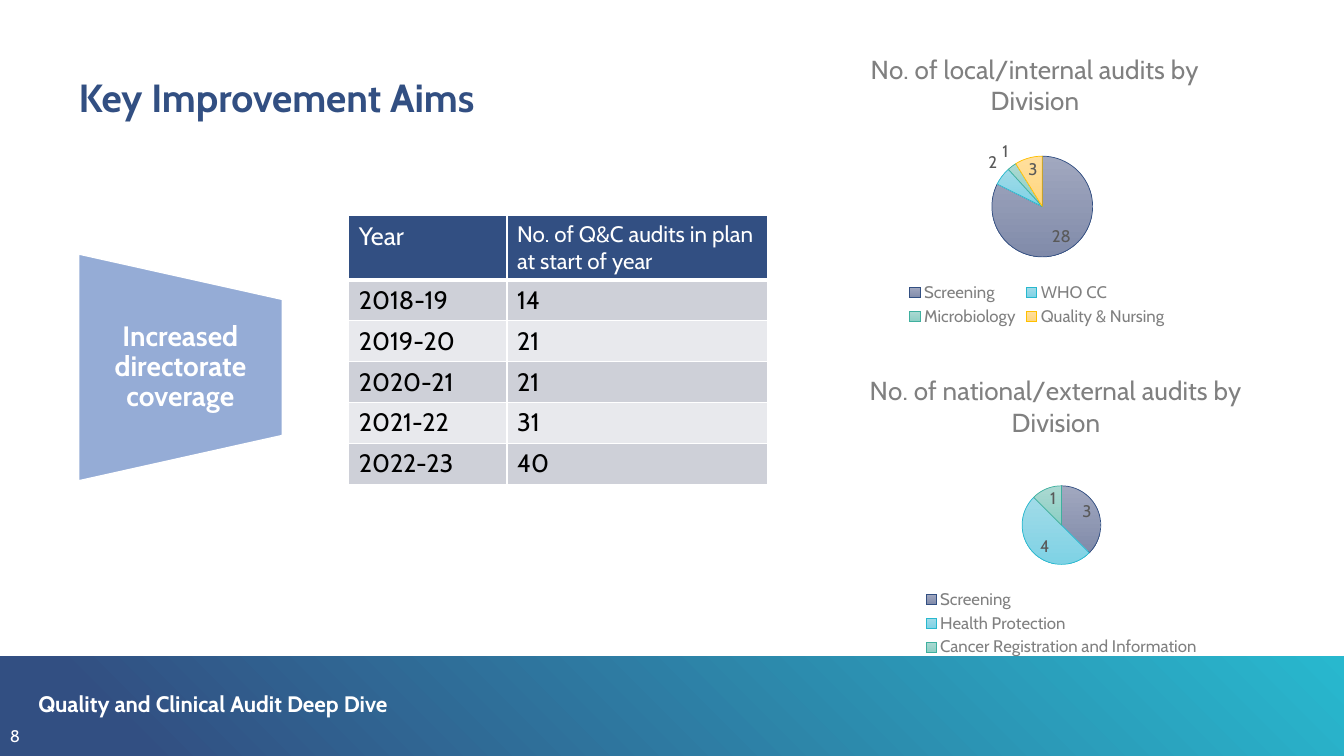
"""Build the slide on key improvement aims for clinical audit."""
from dataclasses import dataclass

from lxml import etree
from pptx import Presentation
from pptx import util as u
from pptx.chart import data
from pptx.dml.color import RGBColor
from pptx.enum import chart as charts, shapes, text
from pptx.oxml import ns

FONT = "Cabin"
SLIDE_WIDTH, SLIDE_HEIGHT = u.Inches(13.33), u.Inches(7.5)
COLUMN, ROW = SLIDE_WIDTH / 100, SLIDE_HEIGHT / 100

WHITE = RGBColor(0xFF, 0xFF, 0xFF)
BLACK = RGBColor(0x00, 0x00, 0x00)
NAVY = RGBColor(0x32, 0x4F, 0x82)
CYAN = RGBColor(0x28, 0xB8, 0xCE)
TEAL = RGBColor(0x3F, 0xB0, 0x9F)
AMBER = RGBColor(0xFF, 0xC0, 0x00)
PERIWINKLE = RGBColor(0x8A, 0xA4, 0xD2)
DARK_BAND = RGBColor(0xCE, 0xD0, 0xD8)
LIGHT_BAND = RGBColor(0xE8, 0xE9, 0xED)
GREY = RGBColor(0x80, 0x80, 0x80)
LABEL_GREY = RGBColor(0x59, 0x59, 0x59)

SLICES = (
    (RGBColor(0xA1, 0xA8, 0xBF), RGBColor(0x81, 0x8B, 0xAA), NAVY),
    (RGBColor(0xA1, 0xDB, 0xE8), RGBColor(0x7E, 0xD2, 0xE5), CYAN),
    (RGBColor(0xAB, 0xD9, 0xD2), RGBColor(0x8C, 0xCF, 0xC4), TEAL),
    (RGBColor(0xFF, 0xDF, 0x9E), RGBColor(0xFF, 0xD6, 0x7C), AMBER),
)


@dataclass(frozen=True)
class Area:
    """A region in grid columns and rows."""
    left: float
    top: float
    width: float
    height: float

    def emu(self) -> tuple[int, int, int, int]:
        """Return left, top, width and height in EMU."""
        return (round(self.left * COLUMN), round(self.top * ROW),
                round(self.width * COLUMN), round(self.height * ROW))


@dataclass(frozen=True)
class AuditPie:
    """A pie of audits by division, with layouts as shares of the chart."""
    area: Area
    heading: str
    audits: dict[str, int]
    heading_at: dict[str, float]
    pie_at: dict[str, float]


AUDIT_PIES = (
    AuditPie(Area(58.43, 3.73, 37.5, 40), "No. of local/internal audits by Division",
             {"Screening": 28, "WHO CC": 2, "Microbiology": 1, "Quality & Nursing": 3},
             {"x": 0.16, "y": 0.06}, {"x": 0.41, "y": 0.42, "w": 0.2, "h": 0.34}),
    AuditPie(Area(60.23, 47.47, 37.5, 40), "No. of national/external audits by Division",
             {"Screening": 3, "Health Protection": 4,
              "Cancer Registration and Information": 1},
             {"x": 0.11, "y": 0.03}, {"x": 0.42, "y": 0.42, "w": 0.16, "h": 0.26}),
)
PLAN = (("Year", "No. of Q&C audits in plan at start of year"),
        ("2018-19", "14"), ("2019-20", "21"), ("2020-21", "21"),
        ("2021-22", "31"), ("2022-23", "40"))


def style(font, size: float, color: RGBColor, bold: bool = False) -> None:
    """Set the typeface, size, colour and weight of a font."""
    font.name, font.size, font.bold = FONT, u.Pt(size), bold
    font.color.rgb = color


def write(frame, words: str, *, size: float, color: RGBColor = WHITE, bold: bool = False,
          align=text.PP_ALIGN.LEFT, anchor=text.MSO_ANCHOR.TOP, spacing: float = 0.9,
          inset: tuple[float, float] = (0, 0)) -> None:
    """Fill a text frame with one formatted paragraph."""
    frame.word_wrap, frame.vertical_anchor = True, anchor
    frame.auto_size = text.MSO_AUTO_SIZE.NONE
    frame.margin_left = frame.margin_right = u.Inches(inset[0])
    frame.margin_top = frame.margin_bottom = u.Inches(inset[1])
    frame.text = words
    line = frame.paragraphs[0]
    line.alignment, line.line_spacing, line.space_before = align, spacing, u.Pt(0)
    properties = line._p.get_or_add_pPr()
    properties.set("marL", "0")
    properties.set("indent", "0")
    etree.SubElement(properties, ns.qn("a:buNone"))
    style(line.runs[0].font, size, color, bold)


def blend(fill, stops: tuple[tuple[float, RGBColor], ...], angle: float) -> None:
    """Apply a two-stop linear gradient."""
    fill.gradient()
    fill.gradient_angle = angle
    for stop, (position, color) in zip(fill.gradient_stops, stops):
        stop.position, stop.color.rgb = position, color


def place(element, index: int, shares: dict[str, float]) -> None:
    """Give a chart part a manual layout."""
    for former in element.findall(ns.qn("c:layout")):
        element.remove(former)
    layout = etree.Element(ns.qn("c:layout"))
    manual = etree.SubElement(layout, ns.qn("c:manualLayout"))
    if "w" in shares:
        etree.SubElement(manual, ns.qn("c:layoutTarget"), val="inner")
    for side in "xy":
        etree.SubElement(manual, ns.qn(f"c:{side}Mode"), val="edge")
    for side, share in shares.items():
        etree.SubElement(manual, ns.qn(f"c:{side}"), val=str(share))
    element.insert(index, layout)


def add_band(slide) -> None:
    """Draw the gradient band behind the footer."""
    band = slide.shapes.add_shape(shapes.MSO_SHAPE.RECTANGLE,
                                  *Area(0, 86.8, 100, 13.2).emu())
    band.shadow.inherit = False
    band.line.fill.background()
    blend(band.fill, ((0.1, NAVY), (1, CYAN)), 45)
    slide.shapes._spTree.insert(2, band._element)


def add_funnel(slide) -> None:
    """Draw the tapering panel that names the aim."""
    left, top, width, height = Area(5.85, 33.6, 15.15, 30).emu()
    builder = slide.shapes.build_freeform(left, top + height)
    builder.add_line_segments(((left, top), (left + width, top + height // 5),
                               (left + width, top + height * 4 // 5)), close=True)
    funnel = builder.convert_to_shape()
    funnel.shadow.inherit = False
    funnel.fill.solid()
    funnel.fill.fore_color.rgb = PERIWINKLE
    tint = funnel._element.spPr.find(f".//{ns.qn('a:srgbClr')}")
    etree.SubElement(tint, ns.qn("a:alpha"), val="90000")
    funnel.line.color.rgb, funnel.line.width = WHITE, u.Pt(1)
    write(funnel.text_frame, "Increased directorate coverage", size=20, bold=True,
          align=text.PP_ALIGN.CENTER, anchor=text.MSO_ANCHOR.MIDDLE, inset=(0.12, 0.45))


def add_border(cell, side: str, points: float) -> None:
    """Draw one white cell border."""
    border = etree.SubElement(cell._tc.get_or_add_tcPr(), ns.qn(f"a:ln{side}"),
                              w=str(u.Pt(points)))
    fill = etree.SubElement(border, ns.qn("a:solidFill"))
    etree.SubElement(fill, ns.qn("a:srgbClr"), val=str(WHITE))


def add_plan(slide) -> None:
    """Draw the table of planned audits by year."""
    plan = slide.shapes.add_table(len(PLAN), 2, *Area(25.95, 28.53, 31.2, 34.67).emu()).table
    for column, width in zip(plan.columns, (11.78, 19.42)):
        column.width = round(width * COLUMN)
    for index, entries in enumerate(PLAN):
        header = index == 0
        plan.rows[index].height = round((8 if header else 5.33) * ROW)
        shade = NAVY if header else DARK_BAND if index % 2 else LIGHT_BAND
        for position, entry in enumerate(entries):
            cell = plan.cell(index, position)
            write(cell.text_frame, entry, size=16 if header and position else 18,
                  color=WHITE if header else BLACK, spacing=1)
            cell.margin_left = cell.margin_right = u.Inches(0.1)
            cell.margin_top = cell.margin_bottom = u.Inches(0.05)
            for side, points in (("L", 1), ("R", 1), ("T", 3 if index == 1 else 1),
                                 ("B", 3 if header else 1)):
                add_border(cell, side, points)
            cell.fill.solid()
            cell.fill.fore_color.rgb = shade


def add_audit_pie(slide, audit_pie: AuditPie) -> None:
    """Draw one pie chart with its heading, labels and legend."""
    numbers = data.CategoryChartData()
    numbers.categories = list(audit_pie.audits)
    numbers.add_series("Series 1", list(audit_pie.audits.values()))
    pie = slide.shapes.add_chart(charts.XL_CHART_TYPE.PIE, *audit_pie.area.emu(),
                                 numbers).chart
    style(pie.font, 10, BLACK)
    heading = pie.chart_title
    heading.text_frame.text = audit_pie.heading
    style(heading.text_frame.paragraphs[0].runs[0].font, 18.6, GREY)
    heading.include_in_layout = False
    place(heading._element, 1, audit_pie.heading_at)
    place(pie._chartSpace.chart.plotArea, 0, audit_pie.pie_at)
    pie.has_legend = True
    pie.legend.position = charts.XL_LEGEND_POSITION.BOTTOM
    pie.legend.include_in_layout = False
    style(pie.legend.font, 12, GREY)
    plot = pie.plots[0]
    plot.has_data_labels = True
    plot.data_labels.show_value, plot.data_labels.show_percentage = True, False
    plot.data_labels.position = charts.XL_LABEL_POSITION.BEST_FIT
    style(plot.data_labels.font, 12, LABEL_GREY)
    for index, (light, deep, edge) in enumerate(SLICES[:len(audit_pie.audits)]):
        division = plot.series[0].points[index].format
        blend(division.fill, ((0, light), (1, deep)), 270)
        division.line.color.rgb, division.line.width = edge, u.Pt(0.5)


def main() -> None:
    """Assemble and save the slide."""
    deck = Presentation()
    deck.slide_width, deck.slide_height = SLIDE_WIDTH, SLIDE_HEIGHT
    slide = deck.slides.add_slide(deck.slide_layouts[1])
    aims, footer = slide.placeholders
    aims.left, aims.top, aims.width, aims.height = Area(5.85, 10.4, 88.3, 5.73).emu()
    write(aims.text_frame, "Key Improvement Aims", size=28, color=NAVY, bold=True)
    footer.left, footer.top, footer.width, footer.height = Area(2.85, 91.73, 29.5, 3.2).emu()
    write(footer.text_frame, "Quality and Clinical Audit Deep Dive", size=16, bold=True)
    add_band(slide)
    add_funnel(slide)
    page = slide.shapes.add_textbox(*Area(0, 95.33, 1.65, 4).emu())
    write(page.text_frame, "8", size=12, spacing=1, inset=(0.1, 0.05))
    add_plan(slide)
    for audit_pie in AUDIT_PIES:
        add_audit_pie(slide, audit_pie)
    deck.save("out.pptx")


if __name__ == "__main__":
    main()
